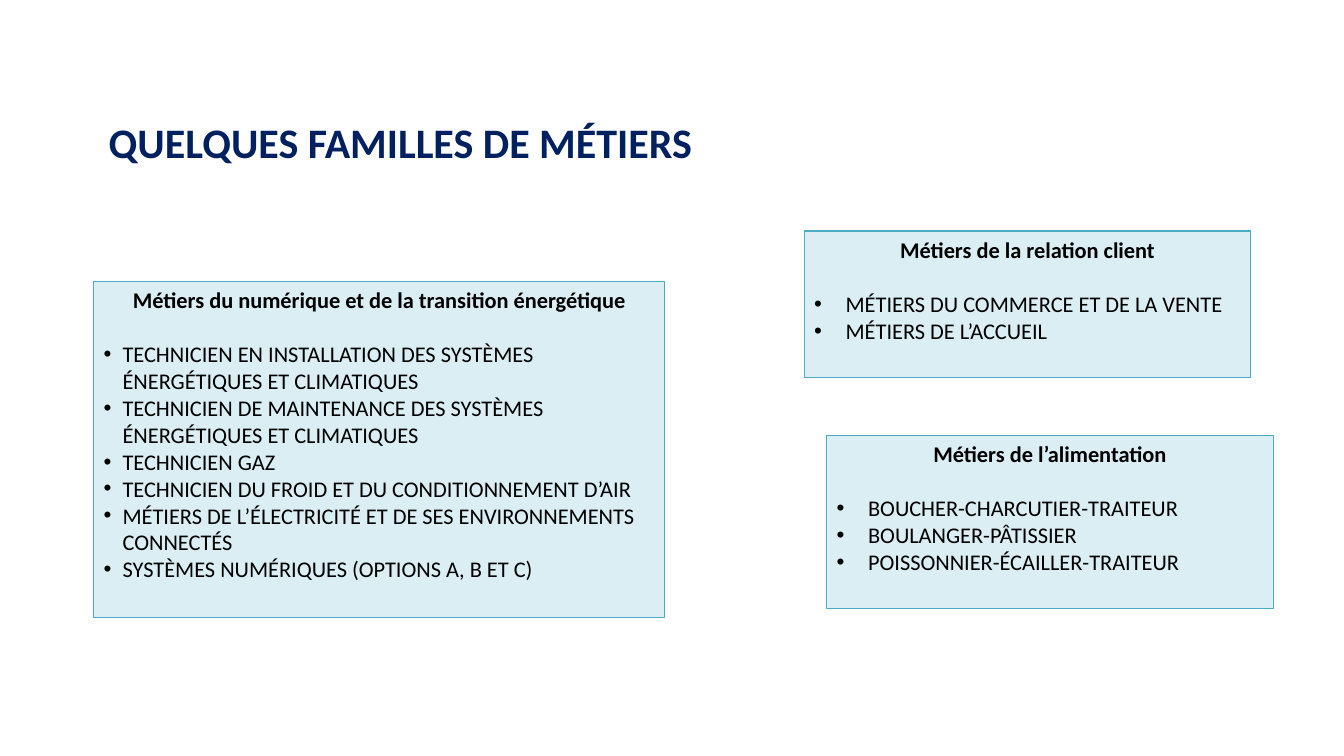
"""Build a slide that presents three families of trades."""
import dataclasses

import lxml.etree
import pptx
import pptx.dml.color
import pptx.enum.shapes
import pptx.enum.text
import pptx.oxml.ns
import pptx.util

Pt = pptx.util.Pt
Align = pptx.enum.text.PP_ALIGN


@dataclasses.dataclass(frozen=True)
class Theme:
    """Hold the colours, font and sizes of the slide."""
    font: str = "Calibri"
    title_colour: str = "002060"
    text_colour: str = "000000"
    panel_fill: str = "DBEEF4"
    panel_line: str = "4BACC6"
    title_size: float = 30
    text_size: float = 16
    line_width: float = 0.75
    heading_gap: float = 19.5


THEME = Theme()

FAMILIES = [
    ((67, 201, 408, 240), 13.5, "Métiers du numérique et de la transition énergétique", [
        "TECHNICIEN EN INSTALLATION DES SYSTÈMES ÉNERGÉTIQUES ET CLIMATIQUES",
        "TECHNICIEN DE MAINTENANCE DES SYSTÈMES ÉNERGÉTIQUES ET CLIMATIQUES",
        "TECHNICIEN GAZ",
        "TECHNICIEN DU FROID ET DU CONDITIONNEMENT D’AIR",
        "MÉTIERS DE L’ÉLECTRICITÉ ET DE SES ENVIRONNEMENTS CONNECTÉS",
        "SYSTÈMES NUMÉRIQUES (OPTIONS A, B ET C)",
    ]),
    ((574.5, 165, 319, 104.5), 22.5, "Métiers de la relation client", [
        "MÉTIERS DU COMMERCE ET DE LA VENTE",
        "MÉTIERS DE L’ACCUEIL",
    ]),
    ((590.5, 311, 319, 124), 22.5, "Métiers de l’alimentation", [
        "BOUCHER-CHARCUTIER-TRAITEUR",
        "BOULANGER-PÂTISSIER",
        "POISSONNIER-ÉCAILLER-TRAITEUR",
    ]),
]


def colour(code):
    """Turn a hexadecimal code into a colour."""
    return pptx.dml.color.RGBColor.from_string(code)


def add_span(para, text, size, code, bold=False):
    """Add one styled run to a paragraph."""
    span = para.add_run()
    span.text = text
    span.font.name = THEME.font
    span.font.size = Pt(size)
    span.font.bold = bold
    span.font.color.rgb = colour(code)


def set_bullet(para, indent):
    """Give a paragraph a round bullet with a hanging indent."""
    properties = para._p.get_or_add_pPr()
    properties.set("marL", str(Pt(indent)))
    properties.set("indent", str(-Pt(indent)))
    for tag, name, value in (("a:buFont", "typeface", "Arial"), ("a:buChar", "char", "•")):
        mark = lxml.etree.SubElement(properties, pptx.oxml.ns.qn(tag))
        mark.set(name, value)


def add_title(page, text):
    """Add the slide title."""
    box = page.shapes.add_textbox(Pt(70.5), Pt(80), Pt(857.5), Pt(46))
    box.text_frame.word_wrap = True
    add_span(box.text_frame.paragraphs[0], text, THEME.title_size, THEME.title_colour, True)


def add_family(page, bounds, indent, heading, trades):
    """Add a panel with a centred heading and a bulleted list of trades."""
    box = page.shapes.add_shape(pptx.enum.shapes.MSO_SHAPE.RECTANGLE, *map(Pt, bounds))
    box.shadow.inherit = False
    box.fill.solid()
    box.fill.fore_color.rgb = colour(THEME.panel_fill)
    box.line.color.rgb = colour(THEME.panel_line)
    box.line.width = Pt(THEME.line_width)
    frame = box.text_frame
    frame.word_wrap = True
    frame.vertical_anchor = pptx.enum.text.MSO_ANCHOR.TOP
    para = frame.paragraphs[0]
    para.alignment = Align.CENTER
    para.space_after = Pt(THEME.heading_gap)
    add_span(para, heading, THEME.text_size, THEME.text_colour, True)
    for trade in trades:
        para = frame.add_paragraph()
        para.alignment = Align.LEFT
        set_bullet(para, indent)
        add_span(para, trade, THEME.text_size, THEME.text_colour)


def main():
    """Build and save the deck."""
    deck = pptx.Presentation()
    deck.slide_width, deck.slide_height = Pt(960), Pt(540)
    page = deck.slides.add_slide(deck.slide_layouts[6])
    add_title(page, "QUELQUES FAMILLES DE MÉTIERS")
    for family in FAMILIES:
        add_family(page, *family)
    deck.save("out.pptx")


if __name__ == "__main__":
    main()
